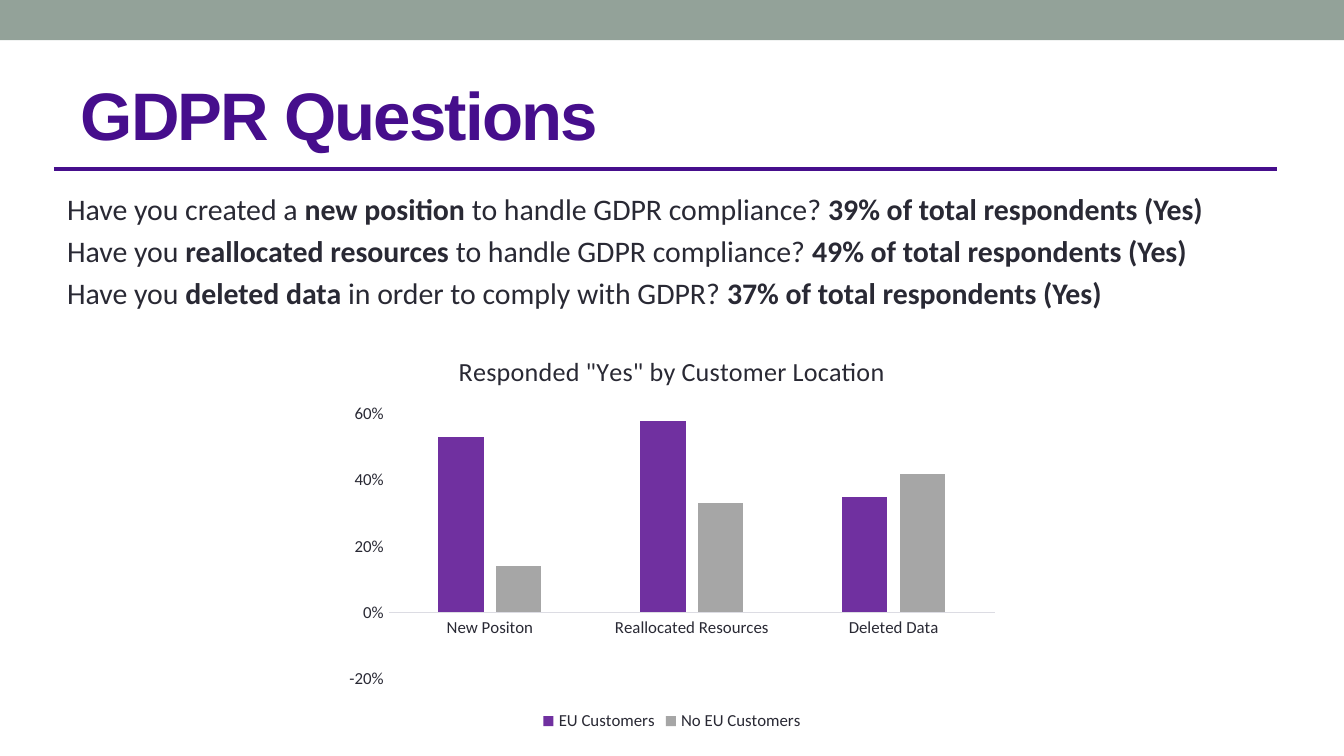
from lxml import etree
from pptx import Presentation
from pptx.chart import data
from pptx.dml.color import RGBColor
from pptx.enum import chart as ch, shapes, text
from pptx.oxml import ns
from pptx.util import Cm, Pt

COLORS = {"band": "93A299", "accent": "460E8C", "ink": "292934",
          "axis": "DCDCE3", "eu": "7030A0", "no_eu": "A6A6A6"}


def color(name):
    return RGBColor.from_string(COLORS[name])


def set_font(font, face, size, color_name, bold=False):
    font.name, font.size, font.bold = face, Pt(size), bold
    font.color.rgb = color(color_name)


prs = Presentation()
prs.slide_width, prs.slide_height = Cm(25.4), Cm(14.29)
slide = prs.slides.add_slide(prs.slide_layouts[5])

# Top band
band = slide.shapes.add_shape(shapes.MSO_SHAPE.RECTANGLE, 0, 0, prs.slide_width, Cm(0.76))
band.shadow.inherit = False
band.fill.solid()
band.fill.fore_color.rgb = color("band")
band.line.fill.background()

# Title and rule
title = slide.shapes.title
title.left, title.top, title.width, title.height = Cm(1.27), Cm(1.12), Cm(22.86), Cm(2.06)
title.text_frame.text = "GDPR Questions"
title.text_frame.auto_size = text.MSO_AUTO_SIZE.NONE
title.text_frame.vertical_anchor = text.MSO_ANCHOR.MIDDLE
heading = title.text_frame.paragraphs[0]
heading.alignment = text.PP_ALIGN.LEFT
set_font(heading.font, "Arial", 36, "accent", bold=True)
heading.runs[0].font._element.set("spc", "-100")

rule = slide.shapes.add_connector(shapes.MSO_CONNECTOR.STRAIGHT,
                                  Cm(1.02), Cm(3.2), Cm(24.13), Cm(3.2))
rule.line.color.rgb = color("accent")
rule.line.width = Pt(2.25)
etree.SubElement(rule._element.spPr, ns.qn("a:effectLst"))

# Questions: plain and bold parts alternate
questions = [
    ("Have you created a ", "new position ", "to handle GDPR compliance? ",
     "39% of total respondents (Yes)"),
    ("Have you ", "reallocated resources ", "to handle GDPR compliance? ",
     "49% of total respondents (Yes)"),
    ("Have you ", "deleted data ", "in order to comply with GDPR? ",
     "37% of total respondents (Yes)"),
]
body = slide.shapes.add_textbox(Cm(1.02), Cm(3.48), Cm(23.11), Cm(10.16)).text_frame
body.word_wrap = True
for i, parts in enumerate(questions):
    question = body.add_paragraph() if i else body.paragraphs[0]
    question.alignment = text.PP_ALIGN.JUSTIFY
    question.space_before = Pt(3.2)
    for j, part in enumerate(parts):
        run = question.add_run()
        run.text = part
        set_font(run.font, "Calibri", 16, "ink", bold=j % 2 == 1)

# Chart
answers = data.CategoryChartData(number_format="0%")
answers.categories = ["New Positon", "Reallocated Resources", "Deleted Data"]
answers.add_series("EU Customers", (0.53, 0.58, 0.35))
answers.add_series("No EU Customers", (0.14, 0.33, 0.42))
chart = slide.shapes.add_chart(ch.XL_CHART_TYPE.COLUMN_CLUSTERED, Cm(6.35), Cm(6.3),
                               Cm(12.7), Cm(7.62), answers).chart
set_font(chart.font, "Arial", 10, "ink")

chart.has_title = True
chart.chart_title.include_in_layout = False
chart.chart_title.text_frame.text = 'Responded "Yes" by Customer Location'
set_font(chart.chart_title.text_frame.paragraphs[0].font, "Calibri", 14, "ink")

chart.has_legend = True
chart.legend.position = ch.XL_LEGEND_POSITION.BOTTOM
chart.legend.include_in_layout = False
set_font(chart.legend.font, "Calibri", 9, "ink")

questions_axis, share_axis = chart.category_axis, chart.value_axis
for axis in (questions_axis, share_axis):
    axis.has_major_gridlines = False
    axis.major_tick_mark = axis.minor_tick_mark = ch.XL_TICK_MARK.NONE
    set_font(axis.tick_labels.font, "Calibri", 9, "ink")
questions_axis.format.line.color.rgb = color("axis")
questions_axis.format.line.width = Pt(0.75)
share_axis.format.line.fill.background()
share_axis.minimum_scale, share_axis.maximum_scale = -0.2, 0.6
share_axis.major_unit = 0.2
share_axis.tick_labels.number_format = "0%"
share_axis.tick_labels.number_format_is_linked = False

plot = chart.plots[0]
plot.vary_by_categories = False
plot.gap_width, plot.overlap = 219, -27
for series, fill in zip(plot.series, ("eu", "no_eu")):
    series.format.fill.solid()
    series.format.fill.fore_color.rgb = color(fill)

prs.save("out.pptx")
